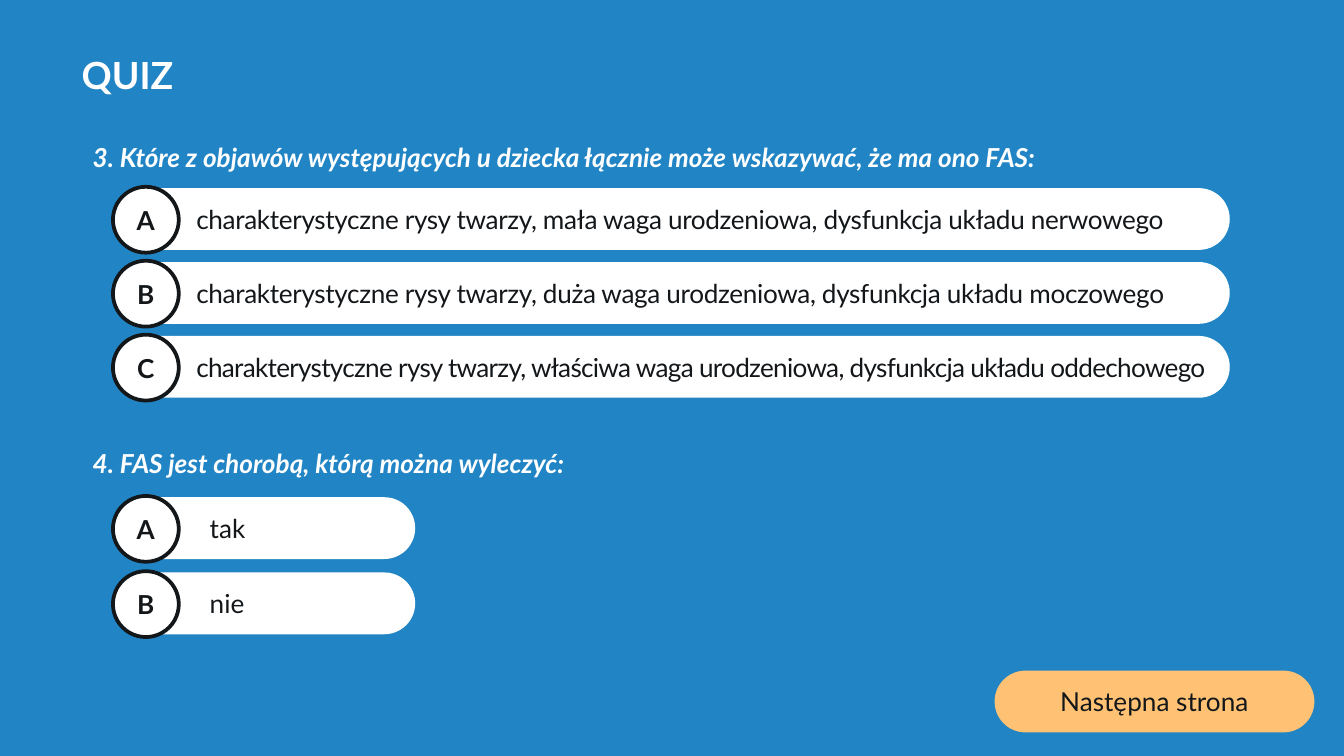
"""Build a quiz slide with two questions, lettered answers and a next-page button."""
import pptx
import pptx.dml.color
import pptx.enum.shapes
import pptx.enum.text
import pptx.util
from dataclasses import dataclass

TITLE = "QUIZ"
BUTTON = "Następna strona"
QUESTIONS = [
    {
        "text": "3. Które z objawów występujących u dziecka łącznie może wskazywać, że ma ono FAS:",
        "top": 0.95, "first_row": 1.4, "row_step": 0.55, "width": 8.29, "indent": 0.6,
        "answers": [
            ("charakterystyczne rysy twarzy, mała waga urodzeniowa, dysfunkcja układu nerwowego", -0.2),
            ("charakterystyczne rysy twarzy, duża waga urodzeniowa, dysfunkcja układu moczowego", -0.2),
            ("charakterystyczne rysy twarzy, właściwa waga urodzeniowa, dysfunkcja układu oddechowego", -0.4),
        ],
    },
    {
        "text": "4. FAS jest chorobą, którą można wyleczyć:",
        "top": 3.23, "first_row": 3.7, "row_step": 0.56, "width": 2.23, "indent": 0.7,
        "answers": [("tak", 0), ("nie", 0)],
    },
]


@dataclass(frozen=True)
class Theme:
    background: str = "2185C5"
    light: str = "FFFFFF"
    dark: str = "13171A"
    accent: str = "FFC173"
    font: str = "Lato"
    title_size: int = 20
    body_size: int = 14
    outline: int = 2


THEME = Theme()
SLIDE_WIDTH = 10
SLIDE_HEIGHT = SLIDE_WIDTH * 9 / 16
TEXT_LEFT, TEXT_WIDTH = 0.51, 8.77
TEXT_INSET, HEADING_INSET = 0.1, 0.18
PILL_LEFT, PILL_HEIGHT = 0.86, 0.46
PILL_INSET = 0.29 * PILL_HEIGHT / 2
BADGE_LEFT, BADGE_SIZE, BADGE_RISE = 0.84, 0.49, 0.01
BUTTON_AREA = (7.4, 4.99, 2.38, PILL_HEIGHT)

Shapes = pptx.enum.shapes.MSO_SHAPE
Align = pptx.enum.text.PP_ALIGN
Anchor = pptx.enum.text.MSO_ANCHOR


def inches(area):
    return [pptx.util.Inches(length) for length in area]


def rgb(code):
    return pptx.dml.color.RGBColor.from_string(code)


def write(shape, text, color, size=THEME.body_size, bold=False, italic=False,
          align=Align.LEFT, anchor=Anchor.MIDDLE, margins=(0, 0, 0, 0), spacing=0):
    frame = shape.text_frame
    frame.text = text
    frame.word_wrap = True
    frame.vertical_anchor = anchor
    (frame.margin_left, frame.margin_top,
     frame.margin_right, frame.margin_bottom) = inches(margins)
    para = frame.paragraphs[0]
    para.alignment = align
    span = para.runs[0]
    span.font.name = THEME.font
    span.font.size = pptx.util.Pt(size)
    span.font.bold = bold
    span.font.italic = italic
    span.font.color.rgb = rgb(color)
    if spacing:
        span._r.get_or_add_rPr().set("spc", str(round(spacing * 100)))
    return para


def add_filled(page, kind, area, fill):
    shape = page.shapes.add_shape(kind, *inches(area))
    shape.shadow.inherit = False
    shape.fill.solid()
    shape.fill.fore_color.rgb = rgb(fill)
    shape.line.fill.background()
    return shape


def add_pill(page, area, fill):
    pill = add_filled(page, Shapes.ROUNDED_RECTANGLE, area, fill)
    pill.adjustments[0] = 0.5
    return pill


def add_text(page, text, top, height, left_inset, **style):
    box = page.shapes.add_textbox(*inches((TEXT_LEFT, top, TEXT_WIDTH, height)))
    margins = (left_inset, TEXT_INSET, TEXT_INSET, TEXT_INSET)
    return write(box, text, THEME.light, bold=True, anchor=Anchor.TOP, margins=margins, **style)


def add_badge(page, letter, top):
    badge = add_filled(page, Shapes.OVAL, (BADGE_LEFT, top, BADGE_SIZE, BADGE_SIZE), THEME.light)
    badge.line.color.rgb = rgb(THEME.dark)
    badge.line.width = pptx.util.Pt(THEME.outline)
    write(badge, letter, THEME.dark, bold=True, align=Align.CENTER)


def add_question(page, question):
    add_text(page, question["text"], question["top"], PILL_HEIGHT, HEADING_INSET, italic=True)
    for row, (answer, spacing) in enumerate(question["answers"]):
        top = question["first_row"] + row * question["row_step"]
        pill = add_pill(page, (PILL_LEFT, top, question["width"], PILL_HEIGHT), THEME.light)
        margins = (question["indent"] - PILL_INSET, 0, 0, 0)
        write(pill, answer, THEME.dark, margins=margins, spacing=spacing)
        add_badge(page, "ABC"[row], top - BADGE_RISE)


def main():
    deck = pptx.Presentation()
    deck.slide_width, deck.slide_height = inches((SLIDE_WIDTH, SLIDE_HEIGHT))
    page = deck.slides.add_slide(deck.slide_layouts[6])
    page.background.fill.solid()
    page.background.fill.fore_color.rgb = rgb(THEME.background)

    title = add_text(page, TITLE, 0.29, 0.66, TEXT_INSET, size=THEME.title_size, align=Align.JUSTIFY)
    title.space_before = pptx.util.Pt(6)
    for question in QUESTIONS:
        add_question(page, question)
    button = add_pill(page, BUTTON_AREA, THEME.accent)
    write(button, BUTTON, THEME.dark, align=Align.CENTER)
    deck.save("out.pptx")


if __name__ == "__main__":
    main()
